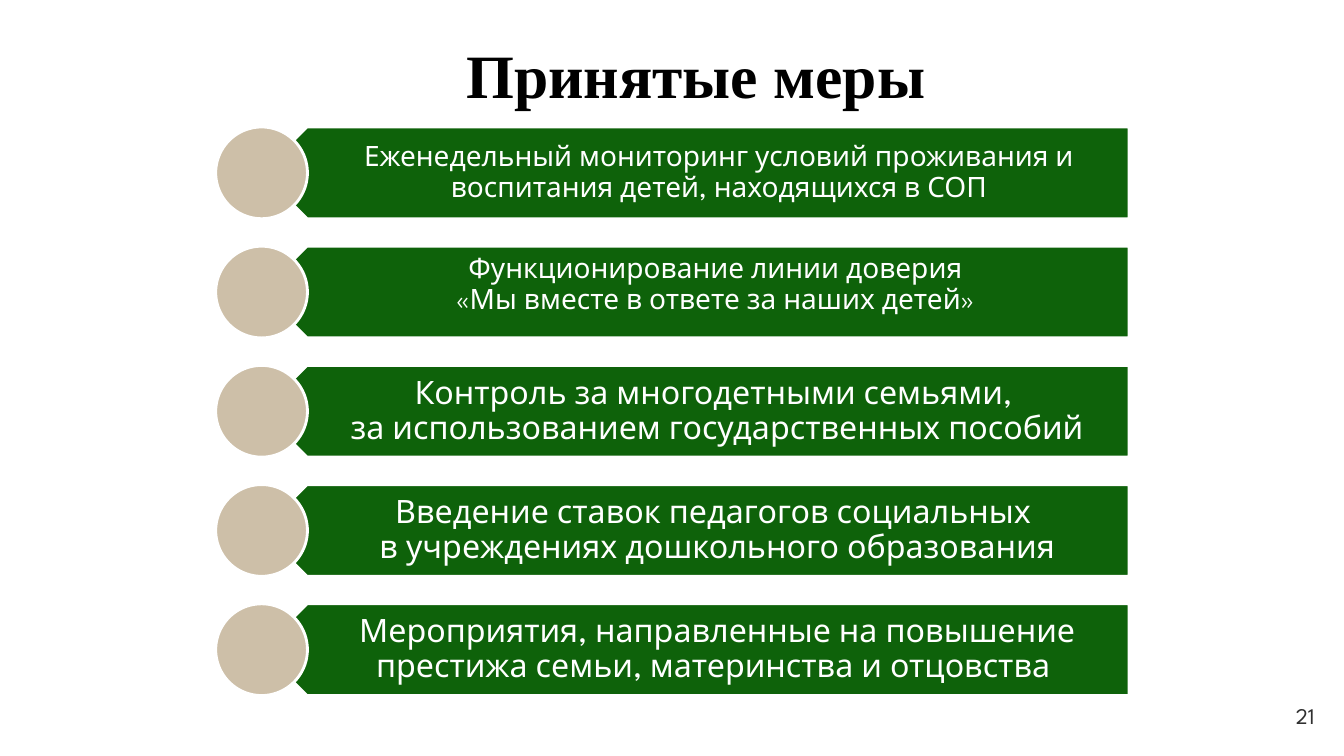
from dataclasses import dataclass

from pptx import Presentation
from pptx.dml.color import RGBColor
from pptx.enum.shapes import MSO_SHAPE
from pptx.enum.text import MSO_ANCHOR, PP_ALIGN
from pptx.shapes.autoshape import Shape
from pptx.slide import Slide
from pptx.text.text import TextFrame
from pptx.util import Pt


@dataclass(frozen=True)
class Theme:
    green: RGBColor = RGBColor(0x0E, 0x62, 0x0A)
    beige: RGBColor = RGBColor(0xCD, 0xBF, 0xA8)
    white: RGBColor = RGBColor(0xFF, 0xFF, 0xFF)
    black: RGBColor = RGBColor(0, 0, 0)
    grey: RGBColor = RGBColor(0x30, 0x30, 0x30)
    title_font: str = "Times New Roman"
    body_font: str = "League Spartan"
    title_size: float = 44
    large: float = 23
    medium: float = 20
    number_size: float = 16


@dataclass(frozen=True)
class Measure:
    lines: tuple[str, ...]
    size: float
    anchor: MSO_ANCHOR = MSO_ANCHOR.MIDDLE


THEME = Theme()
MEASURES = (
    Measure(("Еженедельный мониторинг условий проживания и воспитания детей, "
             "находящихся в СОП",), THEME.medium),
    Measure(("Функционирование линии доверия ",
             "«Мы вместе в ответе за наших детей» "), THEME.medium, MSO_ANCHOR.TOP),
    Measure(("Контроль за многодетными семьями, ",
             "за использованием государственных пособий"), THEME.large),
    Measure(("Введение ставок педагогов социальных ",
             "в учреждениях дошкольного образования"), THEME.large),
    Measure(("Мероприятия, направленные на повышение престижа семьи, "
             "материнства и отцовства ",), THEME.large),
)
FIRST_TOP, PITCH, BAR_HEIGHT = 90.7, 85.15, 65.5
CIRCLE_LEFT, BAR_LEFT, TEXT_LEFT, BAR_RIGHT = 154.1, 186.5, 203, 806.4


def write(tf: TextFrame, lines: tuple[str, ...], size: float, color: RGBColor,
          align: PP_ALIGN, font: str = THEME.body_font, bold: bool = False) -> None:
    """Fill the first paragraph, with a line break between the lines."""
    p = tf.paragraphs[0]
    p.alignment = align
    for i, line in enumerate(lines):
        if i:
            p.add_line_break()
        r = p.add_run()
        r.text = line
        r.font.name, r.font.size, r.font.bold = font, Pt(size), bold
        r.font.color.rgb = color


def add_outlined(s: Slide, kind: MSO_SHAPE, left: float, top: float,
                 width: float, fill: RGBColor) -> Shape:
    sp = s.shapes.add_shape(kind, Pt(left), Pt(top), Pt(width), Pt(BAR_HEIGHT))
    sp.shadow.inherit = False
    sp.fill.solid()
    sp.fill.fore_color.rgb = fill
    sp.line.color.rgb = THEME.white
    sp.line.width = Pt(2)
    return sp


def add_text_box(s: Slide, left: float, top: float, width: float, height: float,
                 anchor: MSO_ANCHOR) -> TextFrame:
    tf = s.shapes.add_textbox(Pt(left), Pt(top), Pt(width), Pt(height)).text_frame
    tf.word_wrap = True
    tf.vertical_anchor = anchor
    return tf


def add_measure(s: Slide, measure: Measure, top: float) -> None:
    bar = add_outlined(s, MSO_SHAPE.PENTAGON, BAR_LEFT, top,
                       BAR_RIGHT - BAR_LEFT, THEME.green)
    bar.rotation = 180
    tf = add_text_box(s, TEXT_LEFT, top, BAR_RIGHT - TEXT_LEFT, BAR_HEIGHT,
                      measure.anchor)
    tf.margin_left = Pt(28.8)
    tf.margin_right = Pt(measure.size * 0.57)
    tf.margin_top = tf.margin_bottom = Pt(measure.size * 0.3)
    write(tf, measure.lines, measure.size, THEME.white, PP_ALIGN.CENTER)
    tf.paragraphs[0].line_spacing = 0.9
    add_outlined(s, MSO_SHAPE.OVAL, CIRCLE_LEFT, top, BAR_HEIGHT, THEME.beige)


def add_title(s: Slide, text: str) -> None:
    sp = s.shapes.title
    sp.left, sp.top, sp.width, sp.height = Pt(63.4), Pt(20.9), Pt(867.6), Pt(63.4)
    sp.text_frame.vertical_anchor = MSO_ANCHOR.MIDDLE
    write(sp.text_frame, (text,), THEME.title_size, THEME.black, PP_ALIGN.CENTER,
          THEME.title_font, bold=True)


def main() -> None:
    prs = Presentation()
    prs.slide_width, prs.slide_height = Pt(960), Pt(540)
    s = prs.slides.add_slide(prs.slide_layouts[5])
    add_title(s, "Принятые меры")
    number = add_text_box(s, 722.2, 496.8, 223.9, 28.8, MSO_ANCHOR.MIDDLE)
    write(number, ("21",), THEME.number_size, THEME.grey, PP_ALIGN.RIGHT)
    for i, measure in enumerate(MEASURES):
        add_measure(s, measure, FIRST_TOP + i * PITCH)
    prs.save("out.pptx")


if __name__ == "__main__":
    main()
